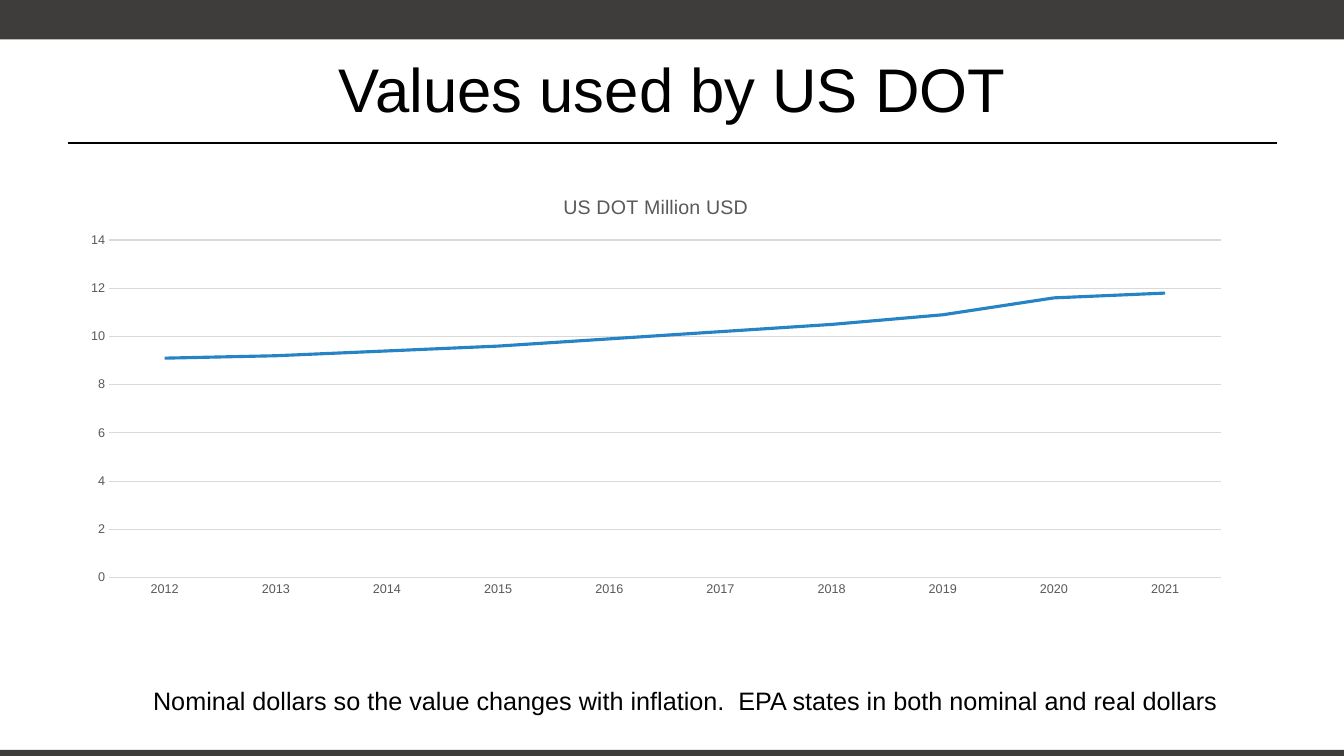
from lxml import etree
from pptx import Presentation
from pptx import util as u
from pptx.chart.data import CategoryChartData
from pptx.dml.color import RGBColor
from pptx.enum import chart as charts, shapes, text
from pptx.oxml.ns import qn

DOT_VALUES = {
    "2012": 9.1, "2013": 9.2, "2014": 9.4, "2015": 9.6, "2016": 9.9,
    "2017": 10.2, "2018": 10.5, "2019": 10.9, "2020": 11.6, "2021": 11.8,
}


def color(hex_value):
    return RGBColor.from_string(hex_value)


def apply(target, values):
    """Set each named attribute of target."""
    for name, value in values.items():
        setattr(target, name, value)


class SlideBuilder:
    FONT = "Arial"
    BLACK, BAR, GRAY, GRID, BLUE = "000000", "3E3D3C", "595959", "D9D9D9", "2683C6"

    def __init__(self, slide):
        self.slide = slide

    def style_font(self, font, size, hex_value):
        apply(font, {"name": self.FONT, "size": u.Pt(size), "bold": False})
        font.color.rgb = color(hex_value)

    def style_line(self, line, width, hex_value):
        line.width = u.Pt(width)
        line.color.rgb = color(hex_value)

    def bar(self, *place):
        shape = self.slide.shapes.add_shape(
            shapes.MSO_SHAPE.RECTANGLE, *map(u.Inches, place))
        shape.shadow.inherit = False
        shape.fill.solid()
        shape.fill.fore_color.rgb = color(self.BAR)
        shape.line.fill.background()

    def rule(self, left, right, top):
        connector = self.slide.shapes.add_connector(
            shapes.MSO_CONNECTOR.STRAIGHT, *map(u.Inches, (left, top, right, top)))
        self.style_line(connector.line, 1.25, self.BLACK)
        etree.SubElement(connector._element.spPr, qn("a:effectLst"))

    def label(self, words, place, size, align, frame_format):
        box = self.slide.shapes.add_textbox(*map(u.Inches, place))
        apply(box.text_frame, frame_format)
        para = box.text_frame.paragraphs[0]
        para.alignment = align
        span = para.add_run()
        span.text = words
        self.style_font(span.font, size, self.BLACK)

    def line_chart(self, title, values, place):
        data = CategoryChartData()
        data.categories = list(values)
        data.add_series(title, list(values.values()))
        chart = self.slide.shapes.add_chart(
            charts.XL_CHART_TYPE.LINE, *map(u.Inches, place), data).chart
        apply(chart, {"has_legend": False, "has_title": True})
        self.style_font(chart.font, 10, self.BLACK)
        chart.chart_title.include_in_layout = False
        para = chart.chart_title.text_frame.paragraphs[0]
        span = para.add_run()
        span.text = title
        self.style_font(span.font, 14, self.GRAY)

        for axis in (chart.category_axis, chart.value_axis):
            apply(axis, {"major_tick_mark": charts.XL_TICK_MARK.NONE,
                         "minor_tick_mark": charts.XL_TICK_MARK.NONE})
            self.style_font(axis.tick_labels.font, 9, self.GRAY)
        self.style_line(chart.category_axis.format.line, 0.75, self.GRID)
        axis = chart.value_axis
        apply(axis, {"minimum_scale": 0, "maximum_scale": 14, "major_unit": 2,
                     "has_major_gridlines": True})
        axis.format.line.fill.background()
        self.style_line(axis.major_gridlines.format.line, 0.75, self.GRID)

        plot = chart.plots[0]
        plot.vary_by_categories = False
        series = plot.series[0]
        series.smooth = False
        series.marker.style = charts.XL_MARKER_STYLE.NONE
        self.style_line(series.format.line, 2.25, self.BLUE)


def main():
    deck = Presentation()
    apply(deck, {"slide_width": u.Inches(13.33), "slide_height": u.Inches(7.5)})
    page = SlideBuilder(deck.slides.add_slide(deck.slide_layouts[6]))

    page.bar(0, 0, 13.33, 0.39)
    page.bar(0, 7.44, 13.33, 0.06)
    page.rule(0.67, 12.67, 1.42)
    page.label("Values used by US DOT", (0.67, 0.25, 12, 1.25), 44,
               text.PP_ALIGN.CENTER,
               {"word_wrap": True, "vertical_anchor": text.MSO_ANCHOR.MIDDLE})
    page.line_chart("US DOT Million USD", DOT_VALUES, (0.67, 1.75, 11.67, 4.25))
    page.label("Nominal dollars so the value changes with inflation.  "
               "EPA states in both nominal and real dollars",
               (1.42, 6.75, 10.86, 0.4), 18, text.PP_ALIGN.LEFT,
               {"word_wrap": False,
                "auto_size": text.MSO_AUTO_SIZE.SHAPE_TO_FIT_TEXT})
    deck.save("out.pptx")


if __name__ == "__main__":
    main()
